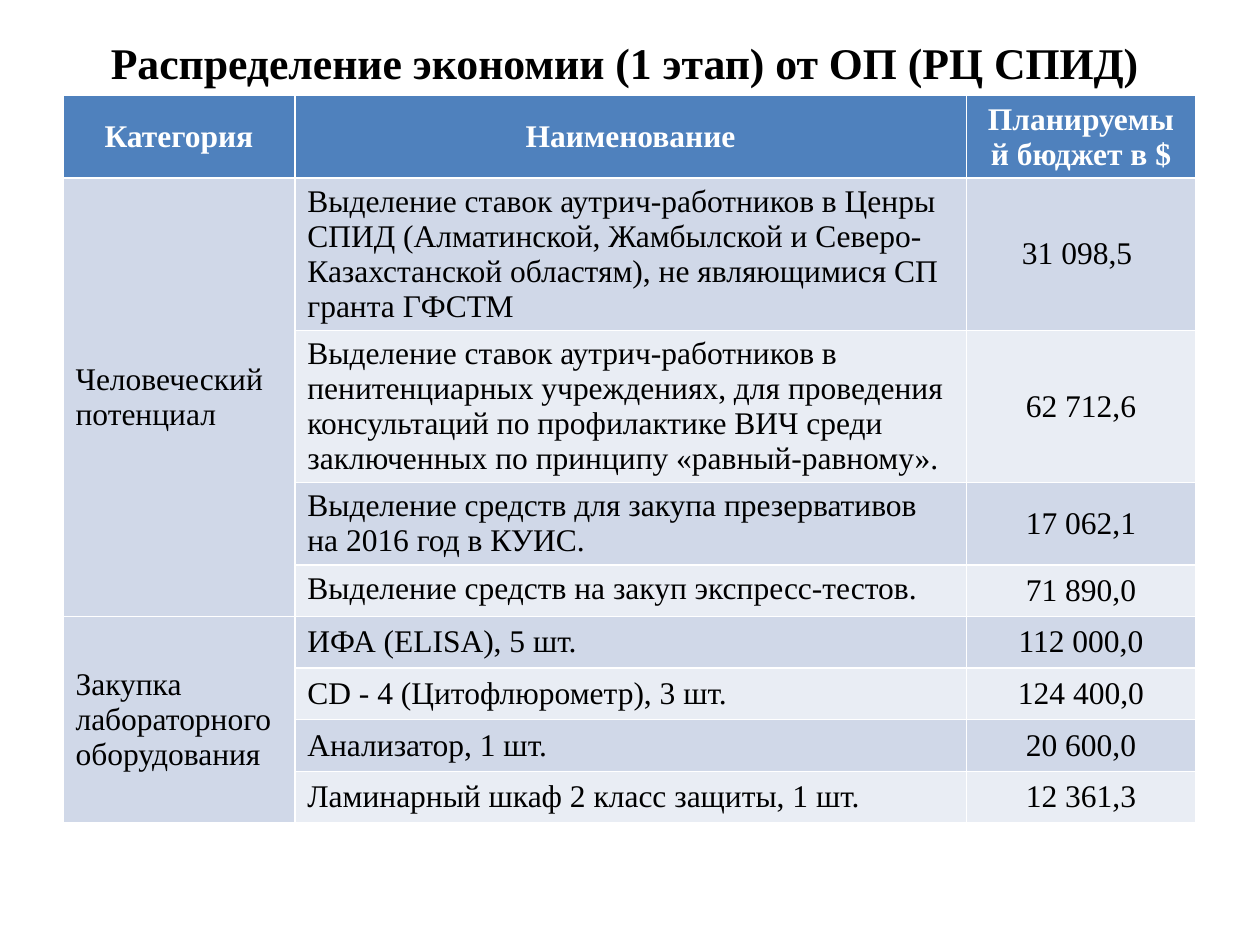
from pptx import Presentation
from pptx.dml.color import RGBColor
from pptx.enum.text import MSO_ANCHOR, PP_ALIGN
from pptx.util import Inches, Pt

BLACK = RGBColor(0x00, 0x00, 0x00)
WHITE = RGBColor(0xFF, 0xFF, 0xFF)
HEADER_BLUE = RGBColor(0x4F, 0x81, 0xBD)
BANDS = (RGBColor(0xD0, 0xD8, 0xE8), RGBColor(0xE9, 0xED, 0xF4))

HEADERS = ("Категория", "Наименование", "Планируемый бюджет в $")
GROUPS = (
    ("Человеческий потенциал", (
        ("Выделение ставок аутрич-работников в Ценры СПИД (Алматинской, "
         "Жамбылской и Северо-Казахстанской областям), не являющимися СП "
         "гранта ГФСТМ", "31 098,5 "),
        ("Выделение ставок аутрич-работников в пенитенциарных учреждениях, "
         "для проведения консультаций по профилактике ВИЧ среди заключенных "
         "по принципу «равный-равному».", " 62 712,6 "),
        ("Выделение средств для закупа презервативов на 2016 год в КУИС.",
         " 17 062,1 "),
        ("Выделение средств на закуп экспресс-тестов.", " 71 890,0 "),
    )),
    ("Закупка лабораторного оборудования", (
        ("ИФА (ELISA), 5 шт.", " 112 000,0 "),
        ("CD - 4 (Цитофлюрометр), 3 шт.", " 124 400,0 "),
        ("Анализатор, 1 шт.", " 20 600,0 "),
        ("Ламинарный шкаф 2 класс защиты, 1 шт.", " 12 361,3 "),
    )),
)


class SlideBuilder:
    font = "Times New Roman"
    title_size = Pt(25)
    table_size = Pt(18)

    def __init__(self, prs):
        self.s = prs.slides.add_slide(prs.slide_layouts[5])

    def style(self, p, size, color, bold, align):
        p.alignment = align
        p.font.name = self.font
        p.font.size = size
        p.font.bold = bold
        p.font.color.rgb = color

    def title(self, text, left, top, width, height):
        sp = self.s.shapes.title
        sp.left, sp.top = Inches(left), Inches(top)
        sp.width, sp.height = Inches(width), Inches(height)
        tf = sp.text_frame
        tf.text = text
        tf.vertical_anchor = MSO_ANCHOR.MIDDLE
        self.style(tf.paragraphs[0], self.title_size, BLACK, True, PP_ALIGN.CENTER)

    def cell(self, cell, text, fill, color=BLACK, bold=False,
             align=PP_ALIGN.LEFT, anchor=MSO_ANCHOR.MIDDLE):
        cell.text = text
        cell.vertical_anchor = anchor
        cell.fill.solid()
        cell.fill.fore_color.rgb = fill
        self.style(cell.text_frame.paragraphs[0], self.table_size, color, bold, align)

    def table(self, headers, groups, left, top, widths, row_height):
        n_rows = 1 + sum(len(items) for _, items in groups)
        table = self.s.shapes.add_table(
            n_rows, len(widths), Inches(left), Inches(top),
            Inches(sum(widths)), Inches(row_height * n_rows)).table
        for column, width in zip(table.columns, widths):
            column.width = Inches(width)
        for row in table.rows:
            row.height = Inches(row_height)
        for col, text in enumerate(headers):
            self.cell(table.cell(0, col), text, HEADER_BLUE, WHITE, True,
                      PP_ALIGN.CENTER)
        row = 1
        for group, (category, items) in enumerate(groups):
            first = table.cell(row, 0)
            first.merge(table.cell(row + len(items) - 1, 0))
            self.cell(first, category, BANDS[0])
            for i, (name, budget) in enumerate(items):
                fill = BANDS[i % 2]
                anchor = MSO_ANCHOR.TOP if group == 0 and i else MSO_ANCHOR.MIDDLE
                self.cell(table.cell(row, 1), name, fill, anchor=anchor)
                self.cell(table.cell(row, 2), budget, fill, align=PP_ALIGN.CENTER)
                row += 1


def main():
    prs = Presentation()
    prs.slide_width, prs.slide_height = Inches(10), Inches(7.5)
    builder = SlideBuilder(prs)
    builder.title("Распределение экономии (1 этап) от ОП (РЦ СПИД) ",
                  0.5, 0.3, 9, 0.38)
    builder.table(HEADERS, GROUPS, 0.5, 0.76, (1.84, 5.33, 1.82), 0.41)
    prs.save("out.pptx")


if __name__ == "__main__":
    main()
